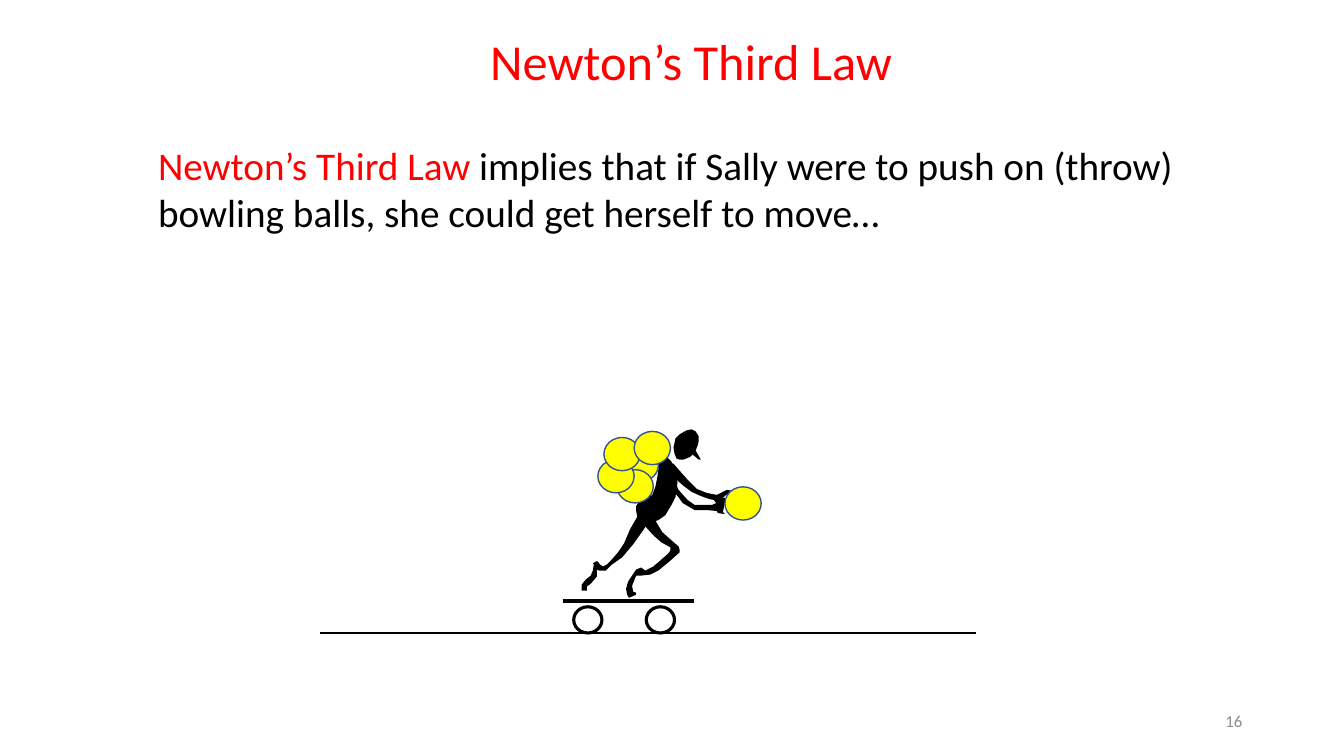
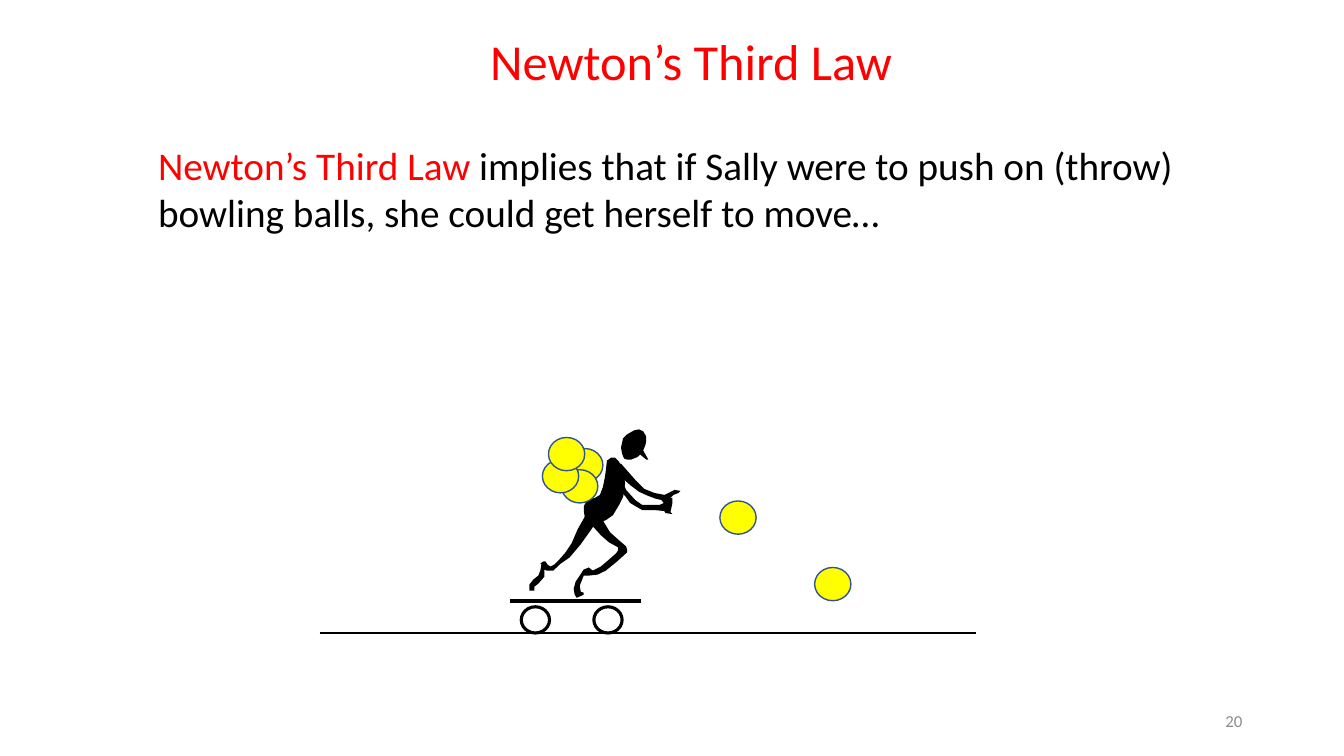
"""Build two slides on Newton's Third Law: Sally throws bowling balls from a cart."""
from lxml.etree import SubElement
from pptx import Presentation
from pptx.dml.color import RGBColor
from pptx.enum.shapes import MSO_CONNECTOR, MSO_SHAPE
from pptx.enum.text import MSO_ANCHOR, MSO_AUTO_SIZE, PP_ALIGN
from pptx.oxml.ns import qn
from pptx.util import Pt

PX = 9144
FONT = "Calibri"
RED = RGBColor(0xFF, 0x00, 0x00)
BLACK = RGBColor(0x00, 0x00, 0x00)
WHITE = RGBColor(0xFF, 0xFF, 0xFF)
YELLOW = RGBColor(0xFF, 0xFF, 0x00)
BLUE = RGBColor(0x32, 0x54, 0x91)
GRAY = RGBColor(0x8C, 0x8C, 0x8C)

LAW = "Newton’s Third Law"
IMPLICATION = (" implies that if Sally were to push on (throw) bowling balls, "
               "she could get herself to move…")

HEAD = [
    (690, 447), (692, 442), (693, 438), (693, 433), (690, 428), (686, 426), (681, 427),
    (674, 431), (670, 435), (668, 444), (669, 450), (671, 455), (674, 456), (678, 456),
    (683, 454), (685, 453), (687, 451), (693, 456), (695, 456), (694, 454)]
TORSO = [
    (652, 473), (653, 466), (654, 457), (658, 454), (662, 454), (666, 458), (670, 467),
    (672, 479), (670, 493), (666, 501), (660, 511), (653, 516), (644, 519), (637, 517),
    (632, 513), (631, 507), (631, 502), (634, 497), (637, 495), (642, 494), (647, 491),
    (650, 483)]
FRONT_LEG = [
    (638, 507), (640, 504), (645, 504), (647, 508), (651, 518), (657, 528), (666, 536),
    (673, 542), (674, 545), (674, 548), (664, 557), (653, 566), (645, 570), (636, 571),
    (631, 571), (629, 576), (627, 581), (628, 587), (631, 588), (631, 590), (624, 593),
    (622, 590), (621, 584), (623, 577), (627, 571), (631, 565), (636, 563), (640, 566),
    (648, 562), (655, 556), (663, 549), (665, 546), (665, 543), (656, 538), (648, 531),
    (639, 521), (636, 513)]
BACK_LEG = [
    (625, 525), (633, 511), (639, 504), (645, 505), (647, 512), (638, 526), (628, 540),
    (617, 553), (607, 560), (601, 566), (594, 566), (592, 565), (592, 572), (586, 579),
    (582, 582), (582, 586), (577, 586), (577, 580), (581, 575), (586, 571), (588, 566),
    (589, 560), (588, 559), (591, 557), (593, 557), (595, 560), (598, 562), (602, 560),
    (606, 556), (613, 548), (619, 539), (622, 532)]
UPPER_ARM = [
    (659, 467), (658, 461), (662, 459), (668, 460), (675, 468), (683, 477), (691, 485),
    (701, 489), (711, 491), (715, 489), (721, 486), (727, 487), (725, 489), (720, 491),
    (717, 494), (715, 497), (715, 502), (712, 504), (711, 500), (708, 496), (703, 495),
    (695, 492), (686, 488), (678, 482), (670, 475), (663, 471)]
LOWER_ARM = [
    (658, 471), (659, 463), (664, 462), (667, 466), (668, 474), (673, 486), (682, 496),
    (689, 501), (706, 501), (713, 498), (717, 494), (719, 494), (719, 499), (717, 508),
    (719, 510), (712, 509), (711, 507), (701, 506), (689, 506), (682, 502), (677, 499),
    (672, 492), (664, 484), (659, 477)]
BODY_PARTS = [HEAD, TORSO, FRONT_LEG, BACK_LEG, UPPER_ARM, LOWER_ARM]
WHEEL_LEFTS = [569, 641]
BALL_STACK = [(617, 445), (612, 466), (593, 456), (599, 434), (629, 428)]


def add_outline(shapes, points, shift):
    """Draw one black closed outline moved sideways by shift."""
    moved = [(x + shift, y) for x, y in points]
    builder = shapes.build_freeform(*moved[0], scale=PX)
    builder.add_line_segments(moved[1:], close=True)
    part = builder.convert_to_shape()
    part.shadow.inherit = False
    part.fill.solid()
    part.fill.fore_color.rgb = BLACK
    part.line.fill.background()


def add_ellipse(shapes, left, top, width, height, fill, line, weight):
    """Draw a filled ellipse with a border."""
    ellipse = shapes.add_shape(
        MSO_SHAPE.OVAL, left * PX, top * PX, width * PX, height * PX)
    ellipse.shadow.inherit = False
    ellipse.fill.solid()
    ellipse.fill.fore_color.rgb = fill
    ellipse.line.color.rgb = line
    ellipse.line.width = Pt(weight)


def add_level_line(shapes, left, right, y, weight):
    """Draw a black horizontal line."""
    line = shapes.add_connector(
        MSO_CONNECTOR.STRAIGHT, left * PX, y * PX, right * PX, y * PX)
    line.line.color.rgb = BLACK
    line.line.width = Pt(weight)
    SubElement(line._element.spPr, qn("a:effectLst"))


def add_sally(page, shift):
    """Draw Sally on her cart as one group."""
    shapes = page.shapes.add_group_shape().shapes
    for points in BODY_PARTS:
        add_outline(shapes, points, shift)
    add_level_line(shapes, 558 + shift, 688 + shift, 596, 3)
    for left in WHEEL_LEFTS:
        add_ellipse(shapes, left + shift, 602, 28, 26, WHITE, BLACK, 2.25)


def place(box, left, top, width, height):
    """Set the position and size of a box."""
    box.left, box.top = left * PX, top * PX
    box.width, box.height = width * PX, height * PX


def write(box, spans, size, align, anchor=MSO_ANCHOR.TOP):
    """Fill a box with one paragraph of coloured spans."""
    frame = box.text_frame
    frame.word_wrap = True
    frame.vertical_anchor = anchor
    frame.auto_size = MSO_AUTO_SIZE.NONE
    para = frame.paragraphs[0]
    para.alignment = align
    para.font.name = FONT
    para.font.size = Pt(size)
    for text, color in spans:
        span = para.add_run()
        span.text = text
        span.font.color.rgb = color


def add_text(page, bounds, *style):
    """Add a text box with one paragraph."""
    box = page.shapes.add_textbox(0, 0, 0, 0)
    place(box, *bounds)
    write(box, *style)


def add_page(deck, number, sally_shift, stack_size, stack_shift, thrown):
    """Add one stage of the throwing sequence."""
    page = deck.slides.add_slide(deck.slide_layouts[5])
    title = page.shapes.title
    place(title, 287, 25, 797, 71)
    write(title, [(LAW, RED)], 36, PP_ALIGN.CENTER)
    add_sally(page, sally_shift)
    add_level_line(page.shapes, 317, 968, 628, 0.75)
    carried = [(x + stack_shift, y) for x, y in BALL_STACK[:stack_size]]
    for left, top in carried + thrown:
        add_ellipse(page.shapes, left, top, 36, 33, YELLOW, BLUE, 1)
    add_text(page, (147, 135, 1043, 104), [(LAW, RED), (IMPLICATION, BLACK)],
             28, PP_ALIGN.LEFT)
    add_text(page, (942, 695, 300, 40), [(str(number), GRAY)],
             12, PP_ALIGN.RIGHT, MSO_ANCHOR.MIDDLE)


def main():
    """Build and save the deck."""
    deck = Presentation()
    deck.slide_width, deck.slide_height = 1333 * PX, 750 * PX
    add_page(deck, 16, 0, 5, 0, [(719, 483)])
    add_page(deck, 20, -52, 4, -55, [(714, 497), (808, 563)])
    deck.save("out.pptx")


if __name__ == "__main__":
    main()
